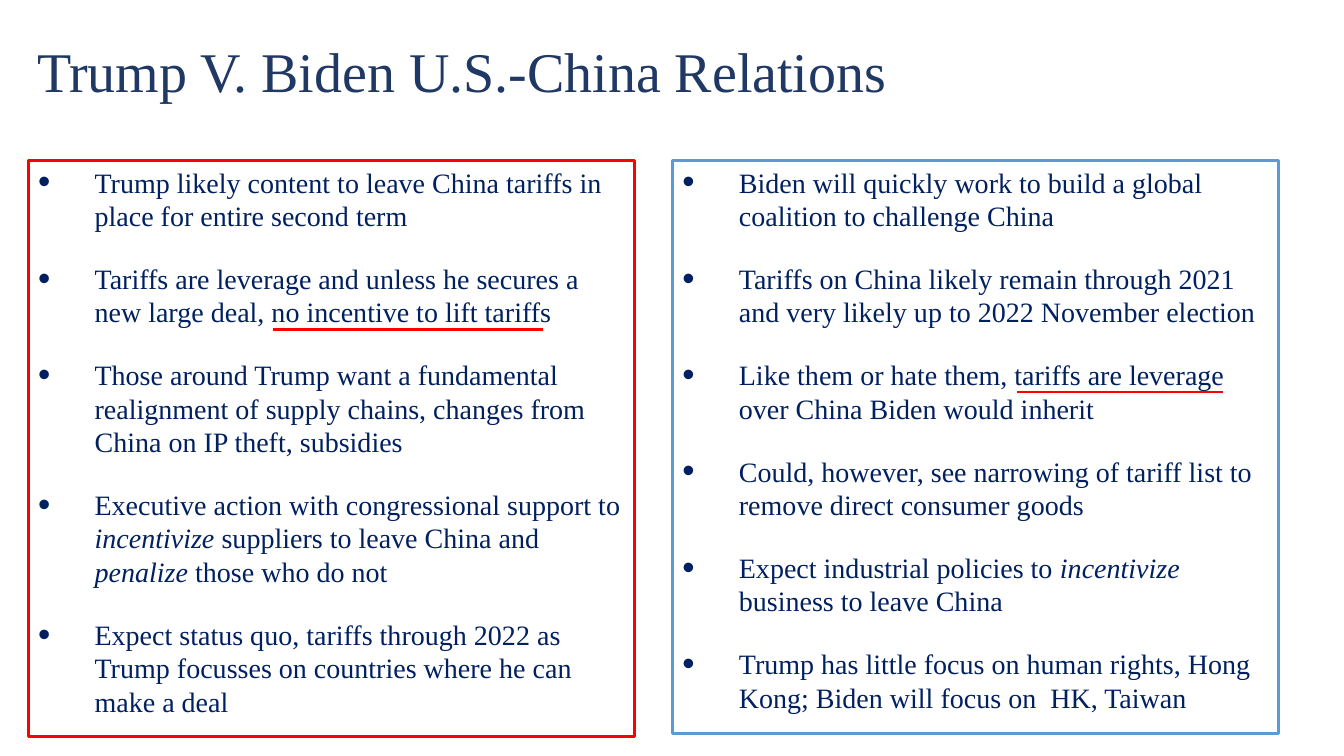
import pptx
import pptx.dml.color
import pptx.enum.shapes
import pptx.enum.text
import pptx.oxml
import pptx.oxml.ns
import pptx.util
from pptx.util import Inches

NAVY = pptx.dml.color.RGBColor(0x00, 0x20, 0x60)
TITLE_BLUE = pptx.dml.color.RGBColor(0x20, 0x38, 0x64)
RED = pptx.dml.color.RGBColor(0xFF, 0x00, 0x00)
BLUE = pptx.dml.color.RGBColor(0x5B, 0x9B, 0xD5)
FONT = "Times New Roman"
INDENT = Inches(0.56)

# Words between asterisks are italic.
TRUMP_POINTS = [
    "Trump likely content to leave China tariffs in place for entire second term",
    "Tariffs are leverage and unless he secures a new large deal, "
    "no incentive to lift tariffs",
    "Those around Trump want a fundamental realignment of supply chains, "
    "changes from China on IP theft, subsidies",
    "Executive action with congressional support to *incentivize* suppliers "
    "to leave China and *penalize* those who do not",
    "Expect status quo, tariffs through 2022 as Trump focusses on countries "
    "where he can make a deal",
]
BIDEN_POINTS = [
    "Biden will quickly work to build a global coalition to challenge China",
    "Tariffs on China likely remain through 2021 and very likely up to "
    "2022 November election",
    "Like them or hate them, tariffs are leverage over China Biden would inherit",
    "Could, however, see narrowing of tariff list to remove direct consumer goods",
    "Expect industrial policies to *incentivize* business to leave China",
    "Trump has little focus on human rights, Hong Kong; "
    "Biden will focus on  HK, Taiwan",
]


def write(p, text, size=20, color=NAVY, line_spacing=None, space_before=0, bullet=False):
    """Fill a paragraph, switching italics at each asterisk."""
    p.alignment = pptx.enum.text.PP_ALIGN.LEFT
    p.line_spacing = line_spacing
    p.space_before = pptx.util.Pt(space_before)
    if bullet:
        pPr = p._p.get_or_add_pPr()
        pPr.set("marL", str(INDENT))
        pPr.set("indent", str(-INDENT))
        for tag in ('buSzPct val="125000"', 'buFont typeface="Arial"', 'buChar char="•"'):
            pPr.append(pptx.oxml.parse_xml(f"<a:{tag} {pptx.oxml.ns.nsdecls('a')}/>"))
    for i, part in enumerate(text.split("*")):
        r = p.add_run()
        r.text = part
        r.font.name = FONT
        r.font.size = pptx.util.Pt(size)
        r.font.color.rgb = color
        r.font.italic = i % 2 == 1


prs = pptx.Presentation()
prs.slide_width = Inches(13.33)
prs.slide_height = Inches(7.5)
s = prs.slides.add_slide(prs.slide_layouts[6])

title = s.shapes.add_textbox(Inches(0.27), Inches(0.35), Inches(12.95), Inches(0.78))
tf = title.text_frame
tf.word_wrap = True
tf.vertical_anchor = pptx.enum.text.MSO_ANCHOR.MIDDLE
write(tf.paragraphs[0], "Trump V. Biden U.S.-China Relations",
      size=40, color=TITLE_BLUE, line_spacing=0.9)

for left, height, outline, points in [
    (0.28, 5.72, RED, TRUMP_POINTS),
    (6.67, 5.69, BLUE, BIDEN_POINTS),
]:
    sp = s.shapes.add_shape(pptx.enum.shapes.MSO_SHAPE.RECTANGLE,
                            Inches(left), Inches(1.59), Inches(6.01), Inches(height))
    sp.shadow.inherit = False
    sp.fill.background()
    sp.line.color.rgb = outline
    sp.line.width = pptx.util.Pt(2.25)
    tf = sp.text_frame
    tf.word_wrap = True
    tf.vertical_anchor = pptx.enum.text.MSO_ANCHOR.TOP
    for i, point in enumerate(points):
        p = tf.add_paragraph() if i else tf.paragraphs[0]
        write(p, point, line_spacing=pptx.util.Pt(23.9),
              space_before=21 if i else 0, bullet=True)

for x1, x2, y in [(10.09, 12.13, 3.89), (2.71, 5.39, 3.27)]:
    underline = s.shapes.add_connector(pptx.enum.shapes.MSO_CONNECTOR.STRAIGHT,
                                       Inches(x1), Inches(y), Inches(x2), Inches(y))
    underline.line.color.rgb = RED
    underline.line.width = pptx.util.Pt(2)
    underline._element.spPr.append(
        pptx.oxml.parse_xml(f"<a:effectLst {pptx.oxml.ns.nsdecls('a')}/>"))

prs.save("out.pptx")
